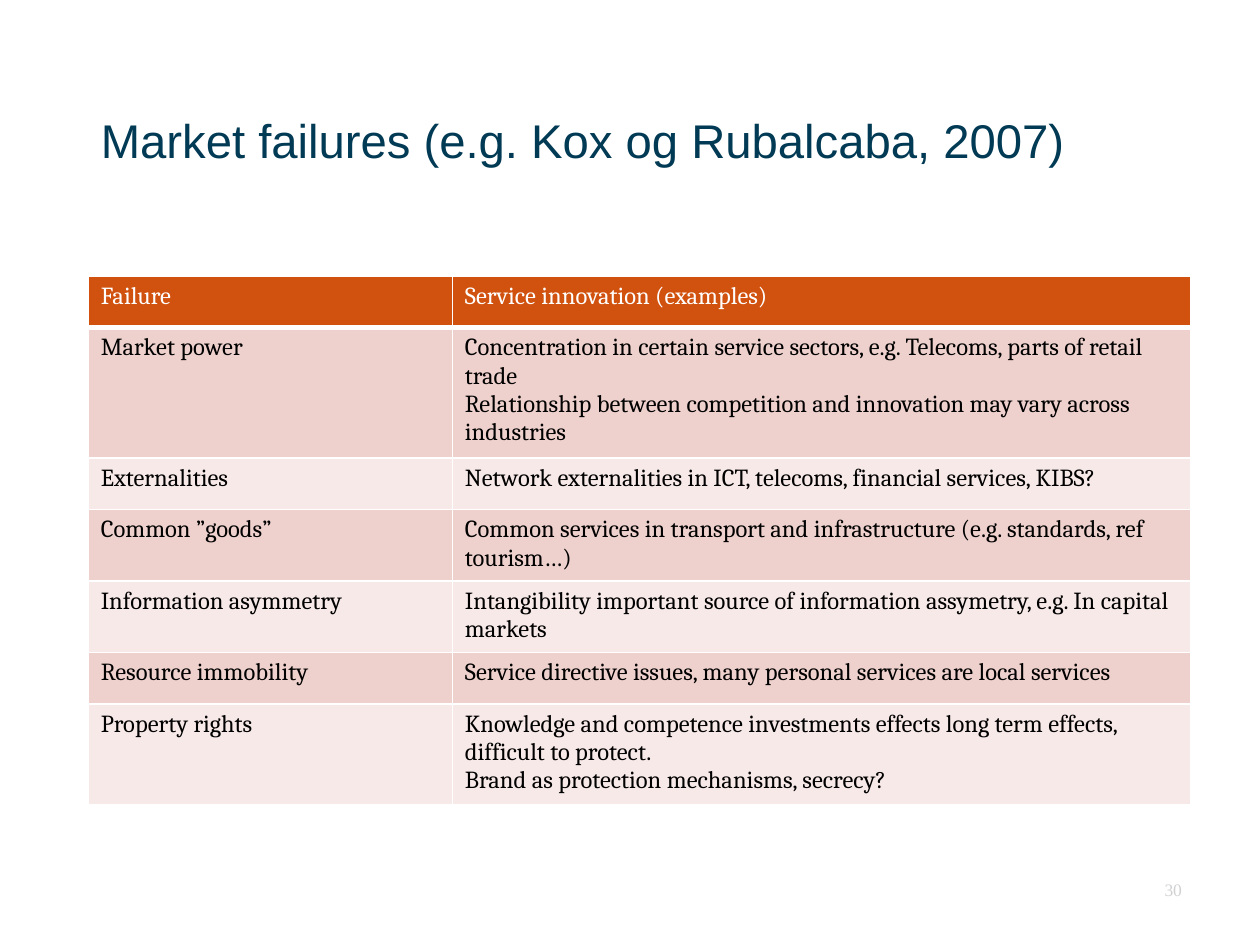
from lxml.etree import SubElement
from pptx import Presentation
from pptx.dml.color import RGBColor
from pptx.enum.text import MSO_ANCHOR, PP_ALIGN
from pptx.oxml.ns import qn
from pptx.util import Inches, Pt

# Content
TITLE = "Market failures (e.g. Kox og Rubalcaba, 2007)"
PAGE = "30"
ROWS = [
    ("Failure", "Service innovation (examples)"),
    ("Market power",
     "Concentration in certain service sectors, e.g. Telecoms, parts of retail trade\n"
     "Relationship between competition and innovation may vary across industries"),
    ("Externalities",
     "Network externalities in ICT, telecoms, financial services, KIBS?"),
    ("Common ”goods”",
     "Common services in transport and infrastructure (e.g. standards, ref tourism…)"),
    ("Information asymmetry",
     "Intangibility important source of information assymetry, e.g. In capital markets"),
    ("Resource immobility",
     "Service directive issues, many personal services are local services"),
    ("Property rights",
     "Knowledge and competence investments effects long term effects, difficult to protect.\n"
     "Brand as protection mechanisms, secrecy?"),
]
COL_WIDTHS = (2.89, 5.86)
ROW_HEIGHT = 0.41

THEME = {
    "title": {"name": "Arial", "size": Pt(27), "color": "003A54"},
    "page": {"name": "Times New Roman", "size": Pt(10), "color": "D0D1D3"},
    "header": {"name": "Cambria", "size": Pt(14), "color": "FFFFFF", "bold": False},
    "body": {"name": "Cambria", "size": Pt(14), "color": "000000", "bold": False},
    "header_fill": "D1520F",
    "band_fills": ("EED1CC", "F7E9E7"),
    "border": "FFFFFF",
}


def write(tf, text, style, align=PP_ALIGN.LEFT):
    for i, line in enumerate(text.split("\n")):
        p = tf.paragraphs[0] if i == 0 else tf.add_paragraph()
        p.alignment = align
        r = p.add_run()
        r.text = line
        for name, value in THEME[style].items():
            if name == "color":
                r.font.color.rgb = RGBColor.from_string(value)
            else:
                setattr(r.font, name, value)


def add_text(s, box, text, style, anchor, align=PP_ALIGN.LEFT):
    tf = s.shapes.add_textbox(*map(Inches, box)).text_frame
    frame = {"word_wrap": True, "vertical_anchor": anchor, "margin_left": 0,
             "margin_top": 0, "margin_right": 0, "margin_bottom": 0}
    for name, value in frame.items():
        setattr(tf, name, value)
    write(tf, text, style, align)


def set_borders(cell, widths):
    tc_pr = cell._tc.get_or_add_tcPr()
    for i, (side, width) in enumerate(widths.items()):
        ln = tc_pr.makeelement(qn(f"a:ln{side}"), {"w": str(Pt(width))})
        fill = SubElement(ln, qn("a:solidFill"))
        SubElement(fill, qn("a:srgbClr"), val=THEME["border"])
        tc_pr.insert(i, ln)  # borders come before the cell fill


prs = Presentation()
prs.slide_width, prs.slide_height = Inches(10), Inches(7.5)
s = prs.slides.add_slide(prs.slide_layouts[6])

# Title and page number
add_text(s, (0.8, 0.42, 7.73, 0.91), TITLE, "title", MSO_ANCHOR.BOTTOM)
add_text(s, (8.69, 6.98, 0.69, 0.4), PAGE, "page", MSO_ANCHOR.TOP, PP_ALIGN.RIGHT)

# Table of market failures
table = s.shapes.add_table(
    len(ROWS), len(COL_WIDTHS), Inches(0.7), Inches(2.19),
    Inches(sum(COL_WIDTHS)), Inches(ROW_HEIGHT * len(ROWS))).table
for column, width in zip(table.columns, COL_WIDTHS):
    column.width = Inches(width)

for i, texts in enumerate(ROWS):
    table.rows[i].height = Inches(ROW_HEIGHT)
    header = i == 0
    color = THEME["header_fill"] if header else THEME["band_fills"][(i - 1) % 2]
    for j, text in enumerate(texts):
        cell = table.cell(i, j)
        cell.fill.solid()
        cell.fill.fore_color.rgb = RGBColor.from_string(color)
        write(cell.text_frame, text, "header" if header else "body")
        set_borders(cell, {"L": 1, "R": 1, "T": 1, "B": 3 if header else 1})

prs.save("out.pptx")
